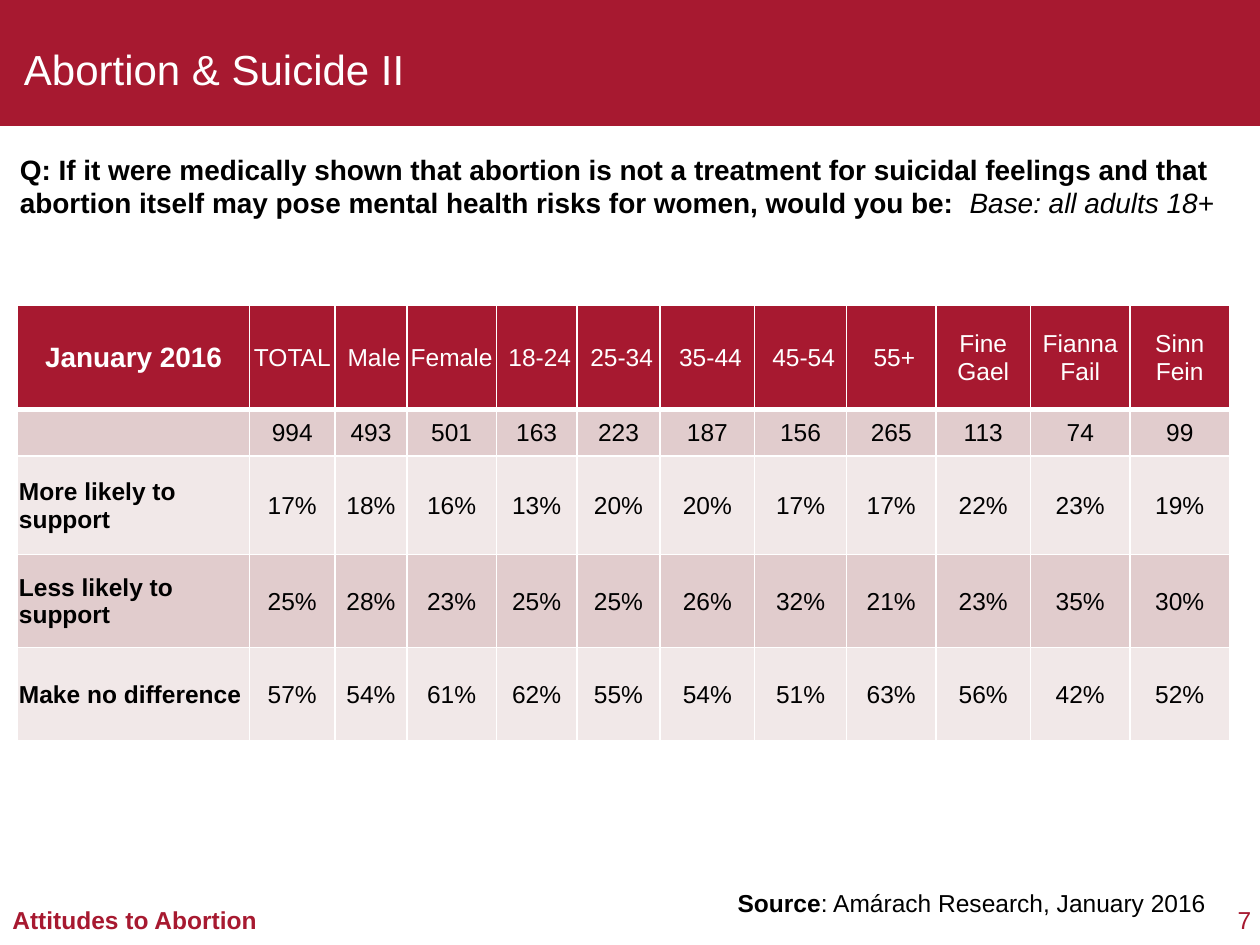
import dataclasses

import pptx
import pptx.dml.color
import pptx.enum.shapes
import pptx.enum.text
import pptx.oxml
import pptx.oxml.ns
import pptx.util
from pptx.util import Inches

ALIGN = pptx.enum.text.PP_ALIGN
MIDDLE = pptx.enum.text.MSO_ANCHOR.MIDDLE


@dataclasses.dataclass(frozen=True)
class Theme:
    font: str = "Arial"
    crimson: str = "A71930"
    white: str = "FFFFFF"
    black: str = "000000"
    bands: tuple = ("E1CCCD", "F1E8E8")
    title: int = 24
    heading: int = 16
    body: int = 14


theme = Theme()


def write(frame, spans, size, color, align=ALIGN.LEFT, **frame_format):
    """Fill a text frame with one paragraph of (text, font format) spans."""
    for name, value in frame_format.items():
        setattr(frame, name, value)
    para = frame.paragraphs[0]
    para.alignment = align
    para.font.size = pptx.util.Pt(size)
    for text, font_format in spans:
        span = para.add_run()
        span.text = text
        span.font.color.rgb = pptx.dml.color.RGBColor.from_string(color)
        defaults = {"name": theme.font, "size": pptx.util.Pt(size), "bold": False}
        for name, value in (defaults | font_format).items():
            setattr(span.font, name, value)


def add_borders(cell, widths):
    """Draw white cell edges; widths maps L, R, T, B to points."""
    properties = cell._tc.get_or_add_tcPr()
    for index, (side, width) in enumerate(widths.items()):
        properties.insert(index, pptx.oxml.parse_xml(
            f'<a:ln{side} {pptx.oxml.ns.nsdecls("a")} w="{pptx.util.Pt(width)}">'
            f'<a:solidFill><a:srgbClr val="{theme.white}"/></a:solidFill></a:ln{side}>'))


deck = pptx.Presentation()
deck.slide_width, deck.slide_height = Inches(10), Inches(7.5)
page = deck.slides.add_slide(deck.slide_layouts[6])

# Title band
band = page.shapes.add_shape(
    pptx.enum.shapes.MSO_SHAPE.RECTANGLE, 0, 0, deck.slide_width, Inches(1))
band.shadow.inherit = False
band.fill.solid()
band.fill.fore_color.rgb = pptx.dml.color.RGBColor.from_string(theme.crimson)
band.line.fill.background()

# Title, question, source and footer
bold = {"bold": True}
no_inset = {f"margin_{side}": 0 for side in ("left", "top", "right", "bottom")}
question = ("Q: If it were medically shown that abortion is not a treatment for suicidal "
            "feelings and that abortion itself may pose mental health risks for women, "
            "would you be:  ")
texts = [
    ((0, 0.26, 7.75, 0.57), [("Abortion & Suicide II", {})], theme.title, theme.white,
     ALIGN.LEFT, {"vertical_anchor": MIDDLE, "margin_left": Inches(0.19)}),
    ((0.06, 1.16, 9.94, 0.64),
     [(question, bold), ("Base: all adults 18+", {"italic": True})],
     theme.heading, theme.black, ALIGN.LEFT, {}),
    ((4.97, 7, 4.7, 0.34),
     [("Source", bold), (": Amárach Research, January 2016", {})],
     theme.body, theme.black, ALIGN.RIGHT, {}),
    ((0, 7.13, 2.16, 0.34), [("Attitudes to Abortion", bold)],
     theme.body, theme.crimson, ALIGN.LEFT, {"word_wrap": False}),
    ((9.69, 7.18, 0.24, 0.23), [("7", {})],
     theme.body, theme.crimson, ALIGN.RIGHT, no_inset),
]
for place, spans, size, color, align, frame_format in texts:
    box = page.shapes.add_textbox(*map(Inches, place))
    write(box.text_frame, spans, size, color, align, **({"word_wrap": True} | frame_format))

# Survey results
results = [
    ["January 2016", "TOTAL", "Male", "Female", "18-24", "25-34", "35-44", "45-54", "55+",
     "Fine Gael", "Fianna Fail", "Sinn Fein"],
    ["", "994", "493", "501", "163", "223", "187", "156", "265", "113", "74", "99"],
    ["More likely to support", "17%", "18%", "16%", "13%", "20%", "20%", "17%", "17%",
     "22%", "23%", "19%"],
    ["Less likely to support", "25%", "28%", "23%", "25%", "25%", "26%", "32%", "21%",
     "23%", "35%", "30%"],
    ["Make no difference", "57%", "54%", "61%", "62%", "55%", "54%", "51%", "63%",
     "56%", "42%", "52%"],
]
column_widths = [1.84, 0.68, 0.57, 0.71, 0.64, 0.66, 0.75, 0.73, 0.71, 0.75, 0.79, 0.79]
row_heights = [0.83, 0.37, 0.78, 0.74, 0.74]
indented_headings = {"Male", "18-24", "25-34", "35-44", "45-54", "55+"}

table = page.shapes.add_table(
    len(row_heights), len(column_widths), Inches(0.14), Inches(2.42),
    Inches(sum(column_widths)), Inches(sum(row_heights))).table
for column, width in zip(table.columns, column_widths):
    column.width = Inches(width)
for row, height in zip(table.rows, row_heights):
    row.height = Inches(height)

for row_index, values in enumerate(results):
    header = row_index == 0
    fill = theme.crimson if header else theme.bands[(row_index - 1) % 2]
    borders = {"L": 1, "R": 1, "T": 3 if row_index == 1 else 1, "B": 3 if header else 1}
    for column_index, value in enumerate(values):
        label = column_index == 0
        cell = table.cell(row_index, column_index)
        cell.vertical_anchor = MIDDLE
        cell.margin_left = Inches(0.06 if value in indented_headings else 0.01)
        cell.margin_right = cell.margin_top = Inches(0.01)
        cell.margin_bottom = 0
        cell.fill.solid()
        cell.fill.fore_color.rgb = pptx.dml.color.RGBColor.from_string(fill)
        add_borders(cell, borders)
        write(cell.text_frame, [(value, {"bold": label})] if value else [],
              theme.heading if header and label else theme.body,
              theme.white if header else theme.black,
              ALIGN.LEFT if label and not header else ALIGN.CENTER)

deck.save("out.pptx")
